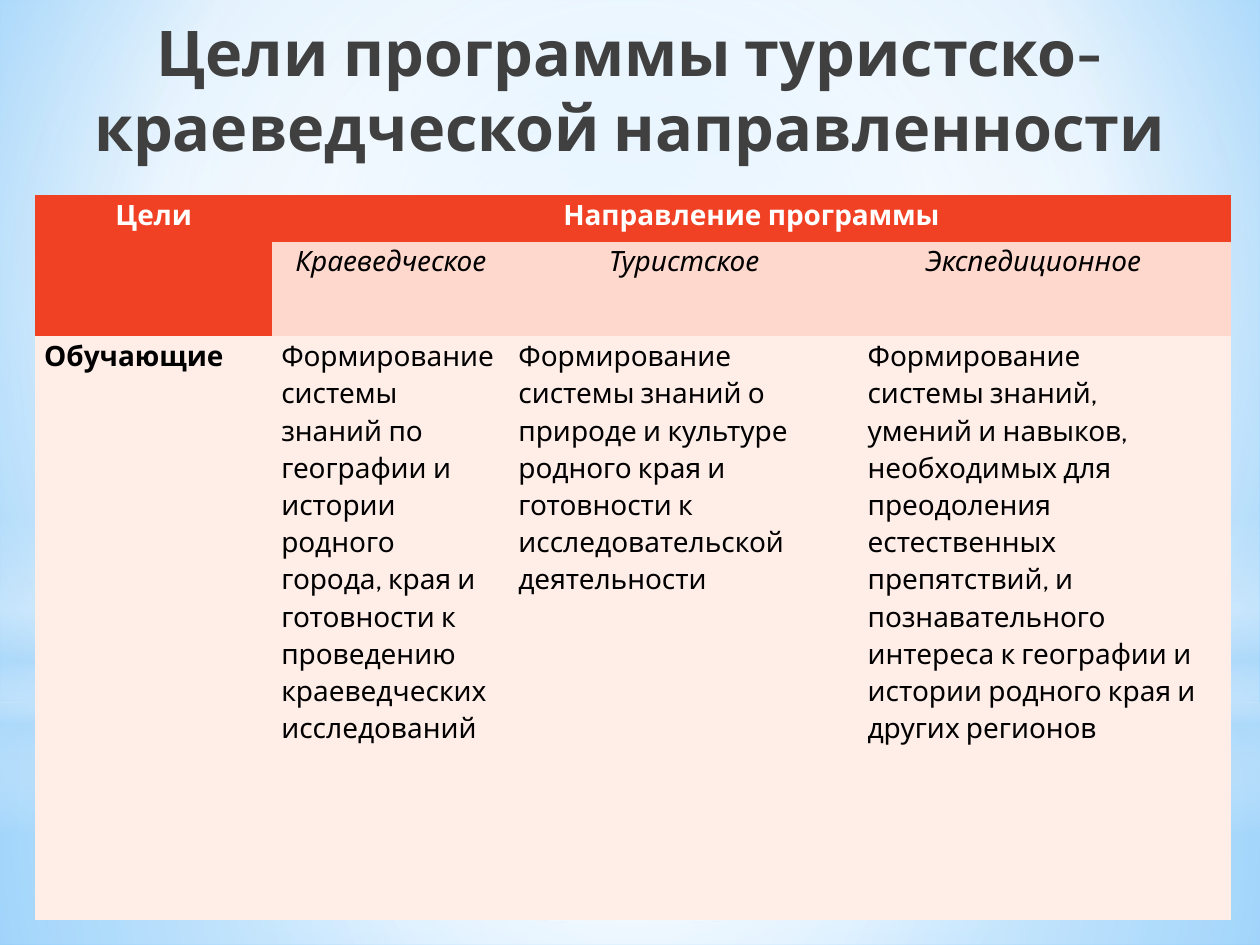
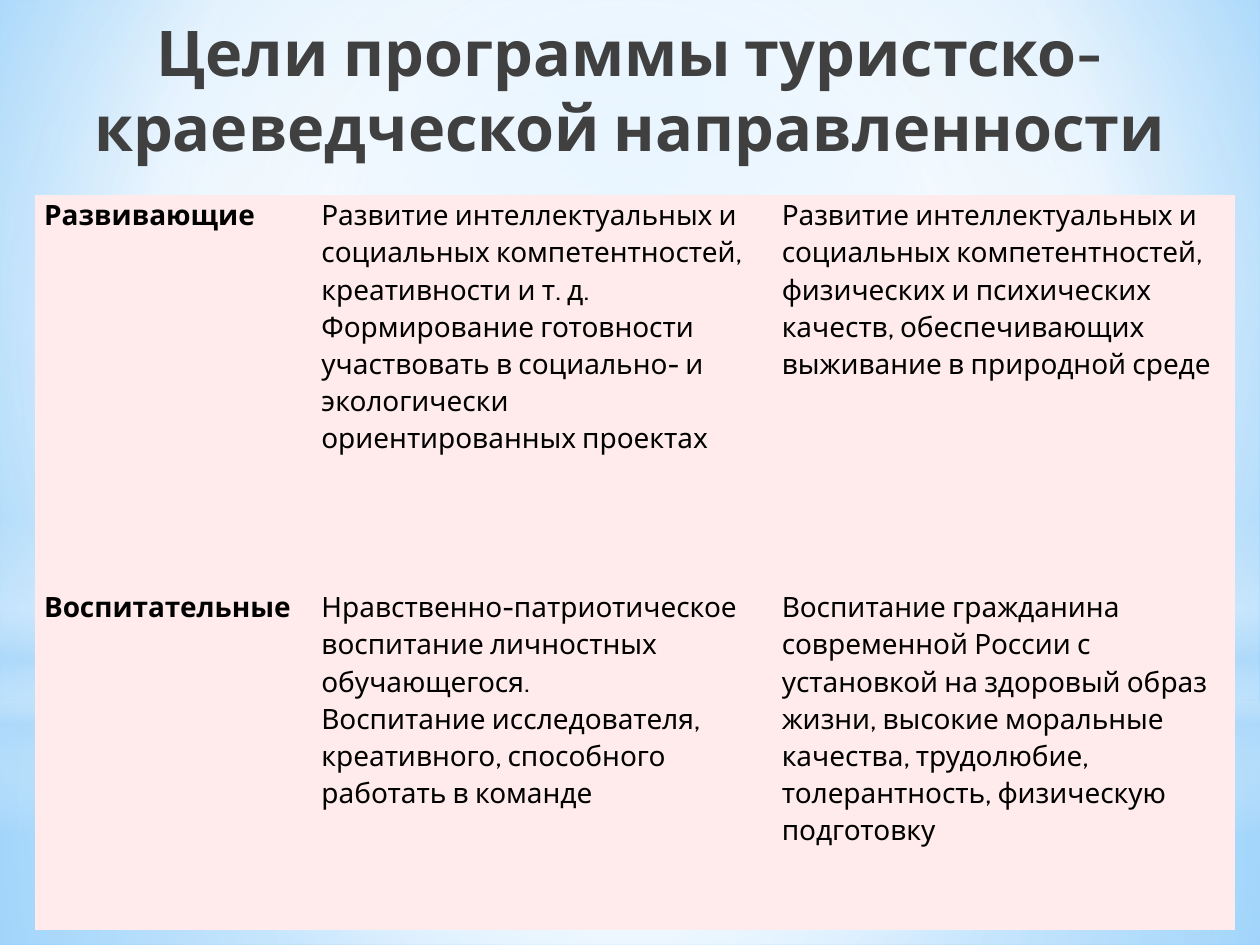
from lxml.etree import SubElement
from pptx import Presentation
from pptx.dml.color import RGBColor
from pptx.enum.shapes import MSO_SHAPE as Preset
from pptx.enum.text import MSO_ANCHOR as Anchor, MSO_AUTO_SIZE as AutoSize, PP_ALIGN as Align
from pptx.oxml.ns import qn
from pptx.util import Cm, Pt

FONT = "Cabin"
TITLE = "Цели программы туристско-краеведческой направленности"
WHITE, BLACK, SKY = "FFFFFF", "000000", "B4DCFA"
RED, PEACH, CREAM, ROSE = "F14124", "FFD8CD", "FFEDE8", "FFEBEB"
NO_STYLE = "{2D5ABB26-0587-4C30-8999-92F81FD0307C}"
TABLE_LEFT, TABLE_TOP = 0.71, 3.94
CENTRE = (50, 50, 50, 50)

BACKDROP = [(0, "9ED5FF", 100), (60, WHITE, 100), (100, "5BB9FF", 100)]
TITLE_INK = [(0, BLACK, 100), (40, "404040", 100), (100, "212745", 65)]
HAZES = [
    (Preset.RECTANGLE, 14.17, 4.88, CENTRE,
     [(0, WHITE, 91), (37, WHITE, 76), (100, SKY, 79)]),
    (Preset.RECTANGLE, 0, 14.17, CENTRE,
     [(0, WHITE, 89), (48, WHITE, 62), (100, SKY, 79)]),
    (Preset.RECTANGLE, 10.46, 6.35, None,
     [(0, WHITE, 0), (29, WHITE, 30), (45, SKY, 40),
      (55, WHITE, 26), (65, SKY, 60), (100, WHITE, 0)]),
    (Preset.OVAL, 4.45, 14.17, CENTRE,
     [(0, WHITE, 100), (56, WHITE, 0)]),
]

HEADER = dict(colour=WHITE, fill=RED, align=Align.CENTER, bold=True)
DIRECTION = dict(colour=BLACK, fill=PEACH, align=Align.CENTER, italic=True)
GOAL = dict(colour=BLACK, fill=CREAM, align=Align.JUSTIFY, bold=True)
CONTENT = dict(colour=BLACK, fill=CREAM, align=Align.LEFT)
ROSE_GOAL = {**GOAL, "fill": ROSE}
ROSE_CONTENT = {**CONTENT, "fill": ROSE}

TEACHING_GOALS = [
    [("Цели", HEADER), ("Направление программы", HEADER)] + [("", HEADER)] * 3,
    [("", HEADER), ("Краеведческое", DIRECTION), ("Туристское", DIRECTION),
     ("Экспедиционное", DIRECTION), ("", DIRECTION)],
    [("Обучающие", GOAL),
     ("Формирование системы знаний по географии и истории родного города, края "
      "и готовности к проведению краеведческих исследований", CONTENT),
     ("Формирование системы знаний о природе и культуре родного края "
      "и готовности к исследовательской деятельности", CONTENT),
     ("Формирование системы знаний, умений и навыков, необходимых для преодоления "
      "естественных препятствий, и познавательного интереса к географии "
      "и истории родного края и других регионов", CONTENT),
     ("", CONTENT)],
]
GROWTH_GOALS = [
    [("Развивающие", ROSE_GOAL),
     ("Развитие интеллектуальных и социальных компетентностей, креативности и т. д.\n"
      "Формирование готовности участвовать в социально- и экологически "
      "ориентированных проектах", ROSE_CONTENT),
     ("Развитие интеллектуальных и социальных компетентностей, физических "
      "и психических качеств, обеспечивающих выживание в природной среде", ROSE_CONTENT)],
    [("Воспитательные", ROSE_GOAL),
     ("Нравственно-патриотическое воспитание личностных обучающегося.\n"
      "Воспитание исследователя, креативного, способного работать в команде",
      ROSE_CONTENT),
     ("Воспитание гражданина современной России с установкой на здоровый образ жизни, "
      "высокие моральные качества, трудолюбие, толерантность, физическую подготовку",
      ROSE_CONTENT)],
]


def colour(hex_code):
    return RGBColor.from_string(hex_code)


def apply_format(target, values):
    for name, value in values.items():
        setattr(target, name, value)


def paint_gradient(fill, owner, stops, focus=None):
    fill.gradient()
    gradient = next(owner.iter(qn("a:gradFill")))
    for child in list(gradient):
        gradient.remove(child)
    stop_list = SubElement(gradient, qn("a:gsLst"))
    for position, hex_code, opacity in stops:
        stop = SubElement(stop_list, qn("a:gs"), pos=str(position * 1000))
        tint = SubElement(stop, qn("a:srgbClr"), val=str(colour(hex_code)))
        if opacity < 100:
            SubElement(tint, qn("a:alpha"), val=str(opacity * 1000))
    if focus:
        spread = SubElement(gradient, qn("a:path"), {"path": "circle"})
        edges = {side: str(value * 1000) for side, value in zip("ltrb", focus)}
        SubElement(spread, qn("a:fillToRect"), edges)
    else:
        SubElement(gradient, qn("a:lin"), ang="5400000", scaled="0")


def decorate_layout(layout, slide, width):
    for placeholder in list(layout.placeholders)[1:]:
        layout.shapes.element.remove(placeholder.element)
    paint_gradient(layout.background.fill, layout.element, BACKDROP, (20, 10, 20, 60))
    for order, (preset, top, height, focus, stops) in enumerate(HAZES, start=2):
        haze = slide.shapes.add_shape(preset, 0, Cm(top), width, Cm(height))
        haze.shadow.inherit = False
        haze.line.fill.background()
        paint_gradient(haze.fill, haze.element, stops, focus)
        layout.shapes.element.insert(order, haze.element)


def write_title(slide, width):
    title = slide.shapes.title
    apply_format(title, dict(left=0, top=Cm(0.33), width=width, height=Cm(2.92)))
    frame = title.text_frame
    frame.text = TITLE
    apply_format(frame, dict(word_wrap=True, auto_size=AutoSize.NONE,
                             vertical_anchor=Anchor.MIDDLE))
    heading = frame.paragraphs[0]
    heading.alignment = Align.CENTER
    font = heading.runs[0].font
    apply_format(font, dict(name=FONT, size=Pt(36), bold=True))
    paint_gradient(font.fill, title.element, TITLE_INK)


def write_cell(cell, text, style):
    apply_format(cell, dict(margin_left=Cm(0.18), margin_right=Cm(0.18),
                            margin_top=0, margin_bottom=0))
    cell.fill.solid()
    cell.fill.fore_color.rgb = colour(style["fill"])
    cell.text = text
    for paragraph in cell.text_frame.paragraphs:
        apply_format(paragraph, dict(alignment=style["align"], line_spacing=1.1))
        for run in paragraph.runs:
            apply_format(run.font, dict(name=FONT, size=Pt(16),
                                        bold=style.get("bold", False),
                                        italic=style.get("italic", False)))
            run.font.color.rgb = colour(style["colour"])


def add_goals_table(slide, goals, widths, heights):
    table = slide.shapes.add_table(
        len(heights), len(widths), Cm(TABLE_LEFT), Cm(TABLE_TOP),
        Cm(sum(widths)), Cm(sum(heights))).table
    apply_format(table, dict(first_row=False, horz_banding=False))
    next(table._tbl.iter(qn("a:tableStyleId"))).text = NO_STYLE
    for column, width in zip(table.columns, widths):
        column.width = Cm(width)
    for row, height, goal_row in zip(table.rows, heights, goals):
        row.height = Cm(height)
        for cell, (text, style) in zip(row.cells, goal_row):
            write_cell(cell, text, style)
    return table


def main():
    deck = Presentation()
    apply_format(deck, dict(slide_width=Cm(25.4), slide_height=Cm(19.05)))
    layout = deck.slide_layouts[5]
    teaching, growth = [deck.slides.add_slide(layout) for _ in range(2)]
    decorate_layout(layout, teaching, deck.slide_width)
    for slide in (teaching, growth):
        write_title(slide, deck.slide_width)

    directions = add_goals_table(teaching, TEACHING_GOALS,
                                 [4.78, 4.78, 7.04, 7.04, 0.37], [0.93, 1.91, 11.76])
    directions.cell(0, 0).merge(directions.cell(1, 0))
    directions.cell(0, 1).merge(directions.cell(0, 4))
    add_goals_table(growth, GROWTH_GOALS, [5.59, 9.28, 9.32], [7.9, 6.91])
    deck.save("out.pptx")


if __name__ == "__main__":
    main()
